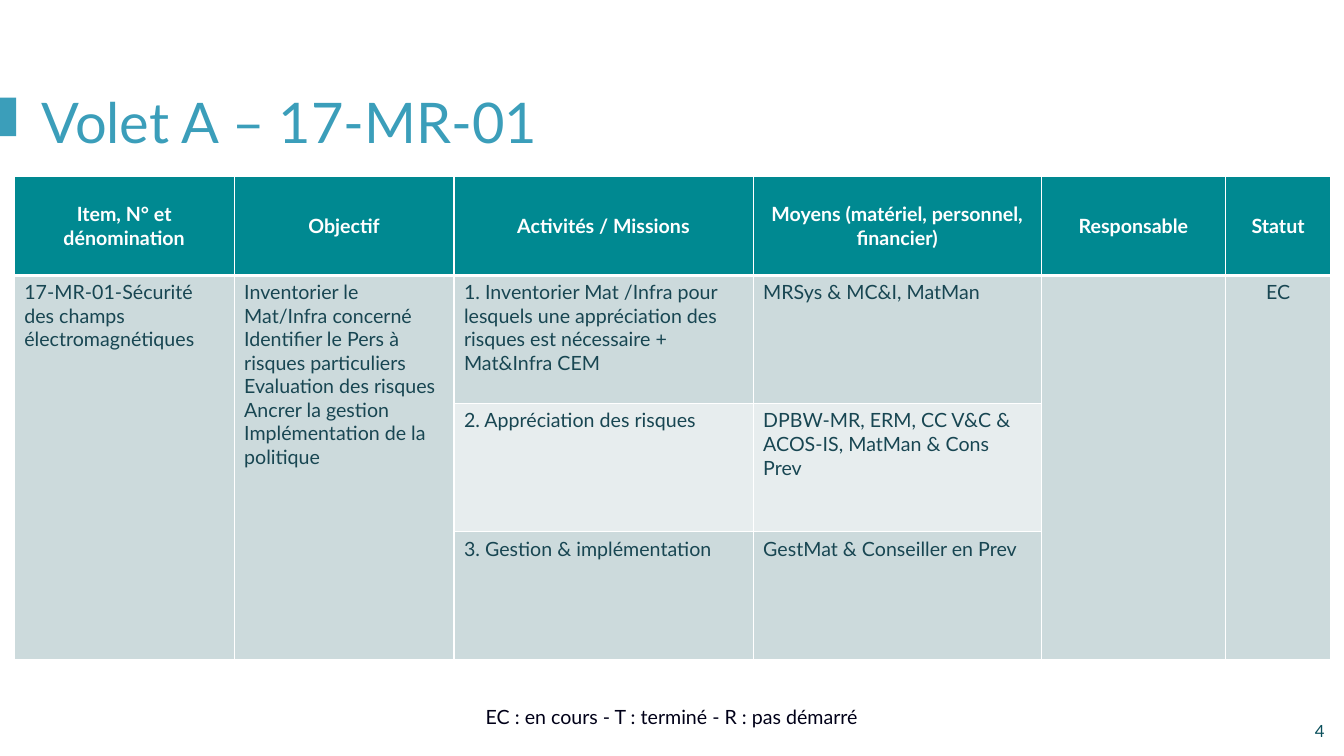
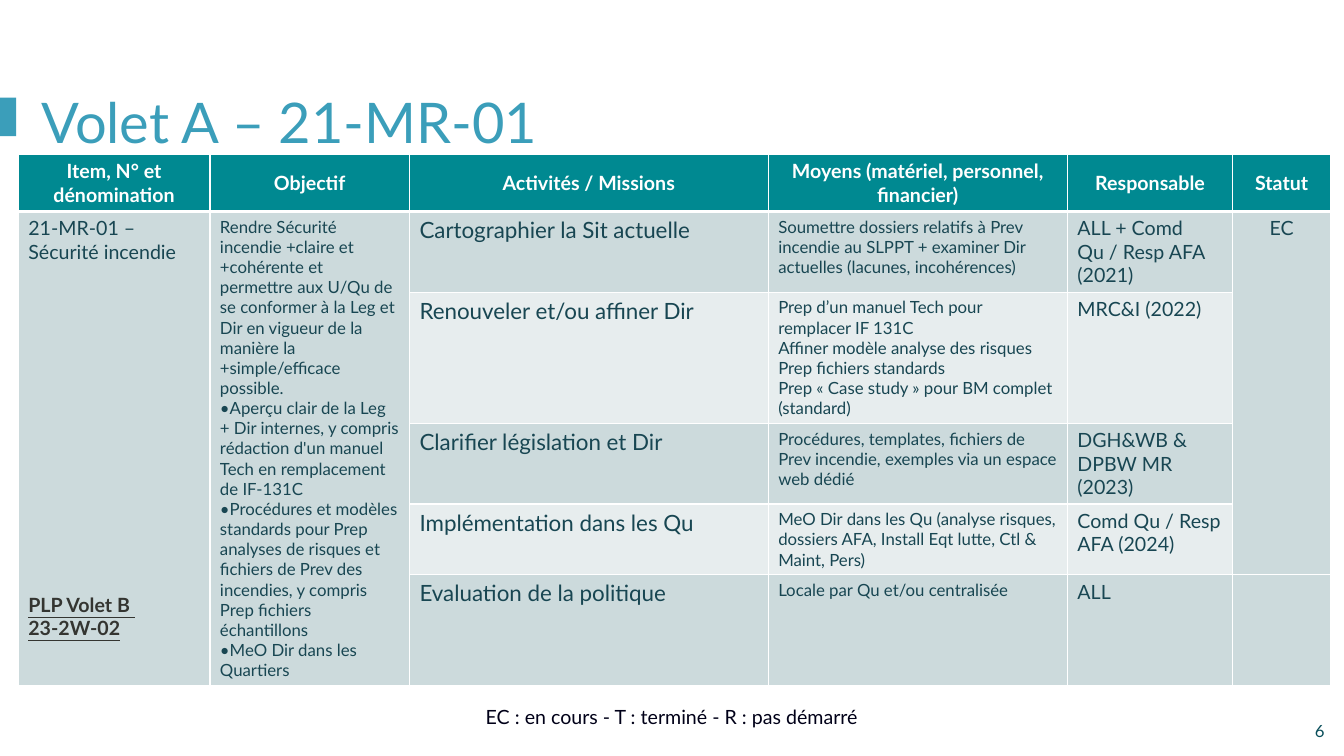
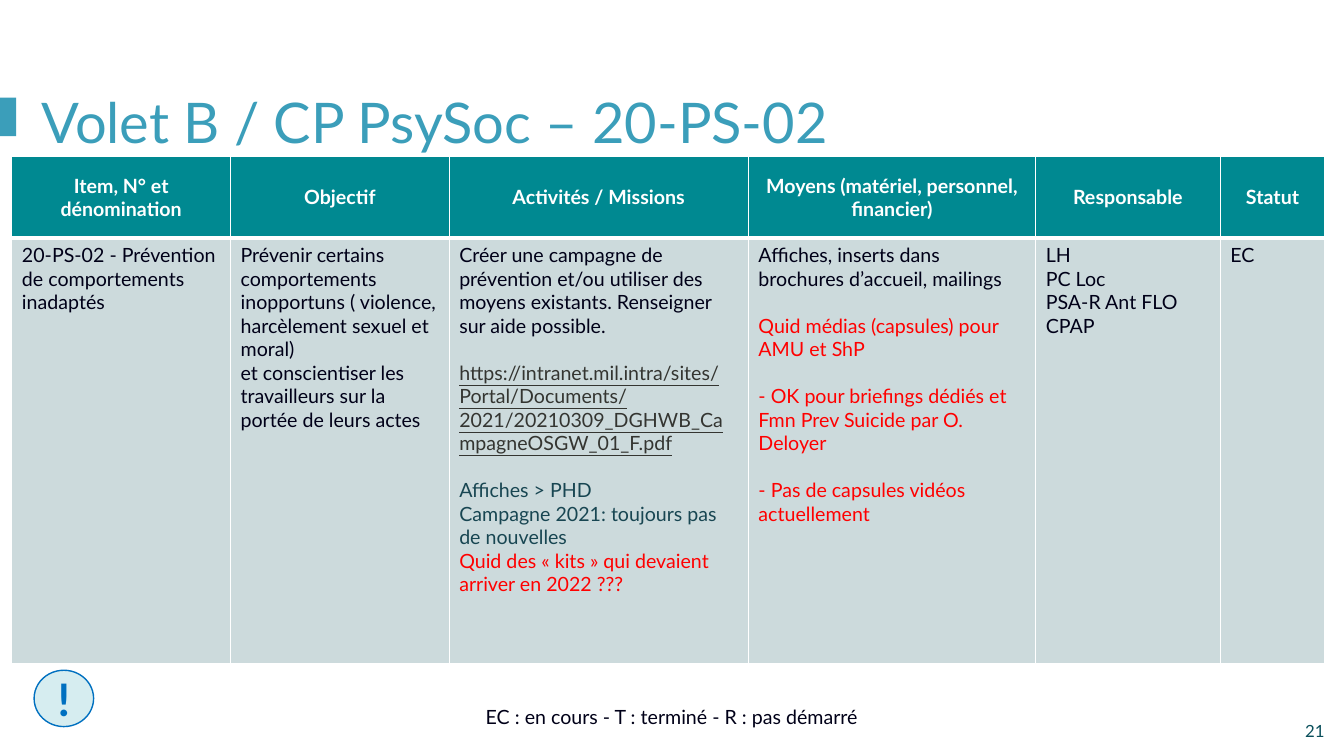
from dataclasses import dataclass

from lxml.etree import SubElement
from pptx import Presentation
from pptx.dml.color import RGBColor
from pptx.enum.shapes import MSO_SHAPE as Shape
from pptx.enum.text import MSO_ANCHOR as Anchor, PP_ALIGN as Align
from pptx.oxml.ns import qn
from pptx.util import Cm, Pt

FONT = "Lato"
WHITE, SKY, TEAL, SLATE = "FFFFFF", "3B9EBA", "008991", "184652"
NAVY, RED, LINK, PAGE = "000018", "FF0000", "343531", "0A4F5B"
BANDS = ("CCDADC", "E7EDEE")
ALERT_FILL, ALERT_LINE = "D6EDF0", "0070C0"
LINE_GAP = 16.8  # one blank line of 14 pt text

SLIDE_WIDTH, SLIDE_HEIGHT = 33.87, 19.05
LEGEND = "EC : en cours - T : terminé - R : pas démarré"
HEADINGS = ("Item, N° et dénomination", "Objectif", "Activités / Missions",
            "Moyens (matériel, personnel, financier)", "Responsable", "Statut")


@dataclass
class Para:
    text: str
    color: str = ""
    before: float = 0
    bold: bool = False
    underline: bool = False


# Content: a cell is a list of paragraphs; None continues the cell above
PLANS = [
    dict(
        title="Volet A – 17-MR-01", page="4", at=(0.36, 4.45),
        columns=(5.54, 5.54, 7.54, 7.26, 4.65, 2.64),
        heights=(2.49, 3.23, 3.23, 3.23),
        sizes=(14,) * 6, color=SLATE, status_align=Align.CENTER, alert=False,
        rows=[
            (["17-MR-01-Sécurité des champs électromagnétiques"],
             ["Inventorier le Mat/Infra concerné",
              "Identifier le Pers à risques particuliers",
              "Evaluation des risques",
              "Ancrer la gestion Implémentation de la politique"],
             ["1. Inventorier Mat /Infra pour lesquels une appréciation des "
              "risques est nécessaire + Mat&Infra CEM"],
             ["MRSys & MC&I, MatMan"], [], ["EC"]),
            (None, None, ["2. Appréciation des risques"],
             ["DPBW-MR, ERM, CC V&C & ACOS-IS, MatMan & Cons Prev"],
             None, None),
            (None, None, ["3. Gestion & implémentation"],
             ["GestMat & Conseiller en Prev"], None, None),
        ]),
    dict(
        title="Volet A – 21-MR-01", page="6", at=(0.46, 3.89),
        columns=(4.83, 5.03, 9.04, 7.54, 4.17, 2.46),
        heights=(1.42, 1.75, 3.25, 1.75, 1.75, 2.51),
        sizes=(14, 12, 16, 12, 14, 14), color=SLATE,
        status_align=Align.CENTER, alert=False,
        rows=[
            (["21-MR-01 – Sécurité incendie",
              Para("PLP Volet B \n23-2W-02", LINK, 14 * LINE_GAP, True, True)],
             ["Rendre Sécurité incendie +claire et +cohérente et permettre aux "
              "U/Qu de se conformer à la Leg et Dir en vigueur de la manière "
              "la +simple/efficace possible.",
              "•Aperçu clair de la Leg + Dir internes, y compris rédaction "
              "d'un manuel Tech en remplacement de IF-131C",
              "•Procédures et modèles standards pour Prep analyses de risques "
              "et fichiers de Prev des incendies, y compris Prep fichiers "
              "échantillons",
              "•MeO Dir dans les Quartiers"],
             ["Cartographier la Sit actuelle"],
             ["Soumettre dossiers relatifs à Prev incendie au SLPPT + examiner "
              "Dir actuelles (lacunes, incohérences)"],
             ["ALL + Comd Qu / Resp AFA (2021)"], ["EC"]),
            (None, None, ["Renouveler et/ou affiner Dir"],
             ["Prep d’un manuel Tech pour remplacer IF 131C",
              "Affiner modèle analyse des risques",
              "Prep fichiers standards",
              "Prep « Case study » pour BM complet (standard)"],
             ["MRC&I (2022)"], None),
            (None, None, ["Clarifier législation et Dir"],
             ["Procédures, templates, fichiers de Prev incendie, exemples via "
              "un espace web dédié"],
             ["DGH&WB & DPBW MR (2023)"], None),
            (None, None, ["Implémentation dans les Qu"],
             ["MeO Dir dans les Qu (analyse risques, dossiers AFA, Install Eqt "
              "lutte, Ctl & Maint, Pers)"],
             ["Comd Qu / Resp AFA (2024)"], None),
            (None, None, ["Evaluation de la politique"],
             ["Locale par Qu et/ou centralisée"], ["ALL"], []),
        ]),
    dict(
        title="Volet B / CP PsySoc – 20-PS-02", page="21", at=(0.3, 3.94),
        columns=(5.51, 5.51, 7.54, 7.24, 4.65, 2.64), heights=(2.06, 10.72),
        sizes=(14,) * 6, color=NAVY, status_align=Align.LEFT, alert=True,
        rows=[
            (["20-PS-02 - Prévention de comportements inadaptés"],
             ["Prévenir certains comportements inopportuns ( violence, "
              "harcèlement sexuel et moral)",
              "et conscientiser les travailleurs sur la portée de leurs actes"],
             ["Créer une campagne de prévention et/ou utiliser des moyens "
              "existants. Renseigner sur aide possible.",
              Para("https://intranet.mil.intra/sites/Portal/Documents/2021/"
                   "20210309_DGHWB_CampagneOSGW_01_F.pdf",
                   LINK, LINE_GAP, underline=True),
              Para("Affiches > PHD", SLATE, LINE_GAP),
              Para("Campagne 2021: toujours pas de nouvelles", SLATE),
              Para("Quid des « kits » qui devaient arriver en 2022 ???", RED)],
             ["Affiches, inserts dans brochures d’accueil, mailings",
              Para("Quid médias (capsules) pour AMU et ShP", RED, LINE_GAP),
              Para("- OK pour briefings dédiés et Fmn Prev Suicide par "
                   "O. Deloyer", RED, LINE_GAP),
              Para("- Pas de capsules vidéos actuellement", RED, LINE_GAP)],
             ["LH\nPC Loc", "PSA-R Ant FLO", "CPAP"], ["EC"]),
        ]),
]


def rgb(value):
    return RGBColor.from_string(value)


def write(frame, paras, size, color, align=Align.LEFT, bold=False):
    for i, para in enumerate(paras):
        para = para if isinstance(para, Para) else Para(para)
        line = frame.paragraphs[0] if i == 0 else frame.add_paragraph()
        line.text = para.text
        line.alignment = align
        if para.before:
            line.space_before = Pt(para.before)
        for run in line.runs:
            font = run.font
            font.name, font.size = FONT, Pt(size)
            font.bold, font.underline = bold or para.bold, para.underline
            font.color.rgb = rgb(para.color or color)


def add_text(slide, box, text, size, color, align, anchor):
    frame = slide.shapes.add_textbox(*map(Cm, box)).text_frame
    frame.word_wrap = True
    frame.vertical_anchor = anchor
    write(frame, [text], size, color, align)


def add_block(slide, kind, box, fill, line=None):
    block = slide.shapes.add_shape(kind, *map(Cm, box))
    block.shadow.inherit = False
    block.fill.solid()
    block.fill.fore_color.rgb = rgb(fill)
    if line:
        block.line.color.rgb = rgb(line)
        block.line.width = Pt(1)
    else:
        block.line.fill.background()
    return block


def paint(cell, fill, top=1, bottom=1):
    """White borders first, then the fill, as the schema orders them."""
    properties = cell._tc.get_or_add_tcPr()
    for side, width in (("L", 1), ("R", 1), ("T", top), ("B", bottom)):
        border = SubElement(properties, qn("a:ln" + side), w=str(Pt(width)))
        solid = SubElement(border, qn("a:solidFill"))
        SubElement(solid, qn("a:srgbClr"), val=WHITE)
    cell.fill.solid()
    cell.fill.fore_color.rgb = rgb(fill)


def add_plan(slide, plan):
    columns, heights, rows = plan["columns"], plan["heights"], plan["rows"]
    box = (*plan["at"], sum(columns), sum(heights))
    table = slide.shapes.add_table(len(heights), len(columns),
                                   *map(Cm, box)).table
    table.horz_banding = False
    for column, width in zip(table.columns, columns):
        column.width = Cm(width)
    for row, height in zip(table.rows, heights):
        row.height = Cm(height)

    for c, heading in enumerate(HEADINGS):
        head = table.cell(0, c)
        paint(head, TEAL, bottom=3)
        head.vertical_anchor = Anchor.MIDDLE
        write(head.text_frame, [heading], 14, WHITE, Align.CENTER, True)

        align = plan["status_align"] if heading == "Statut" else Align.LEFT
        start = 1
        for r, row in enumerate(rows, 1):
            cell = table.cell(r, c)
            if row[c] is not None:
                start = r
                write(cell.text_frame, row[c], plan["sizes"][c],
                      plan["color"], align)
            paint(cell, BANDS[(start - 1) % 2], top=3 if r == 1 else 1)
            # Merge once the last continued row is reached
            if r > start and (r == len(rows) or rows[r][c] is not None):
                table.cell(start, c).merge(cell)


def add_frame(slide, title, page):
    """Title, side mark, legend and page number of every slide."""
    heading = slide.shapes.title
    heading.left, heading.top, heading.width, heading.height = map(
        Cm, (0.79, 2.08, 31.01, 1.96))
    write(heading.text_frame, [title], 40, SKY)
    add_block(slide, Shape.RECTANGLE, (0, 2.46, 0.41, 0.97), SKY)
    add_text(slide, (0, 17.5, SLIDE_WIDTH, 0.99), LEGEND, 14, NAVY,
             Align.CENTER, Anchor.BOTTOM)
    add_text(slide, (26.01, 17.91, 7.62, 1.02), page, 12, PAGE,
             Align.RIGHT, Anchor.MIDDLE)


def add_alert(slide):
    alert = add_block(slide, Shape.FLOWCHART_CONNECTOR,
                      (0.86, 16.89, 1.5, 1.42), ALERT_FILL, ALERT_LINE)
    alert.text_frame.vertical_anchor = Anchor.MIDDLE
    write(alert.text_frame, ["!"], 32, ALERT_LINE, Align.CENTER, True)


def main():
    deck = Presentation()
    deck.slide_width, deck.slide_height = Cm(SLIDE_WIDTH), Cm(SLIDE_HEIGHT)
    title_only = deck.slide_layouts[5]
    for plan in PLANS:
        slide = deck.slides.add_slide(title_only)
        add_frame(slide, plan["title"], plan["page"])
        if plan["alert"]:
            add_alert(slide)
        add_plan(slide, plan)
    deck.save("out.pptx")


if __name__ == "__main__":
    main()
